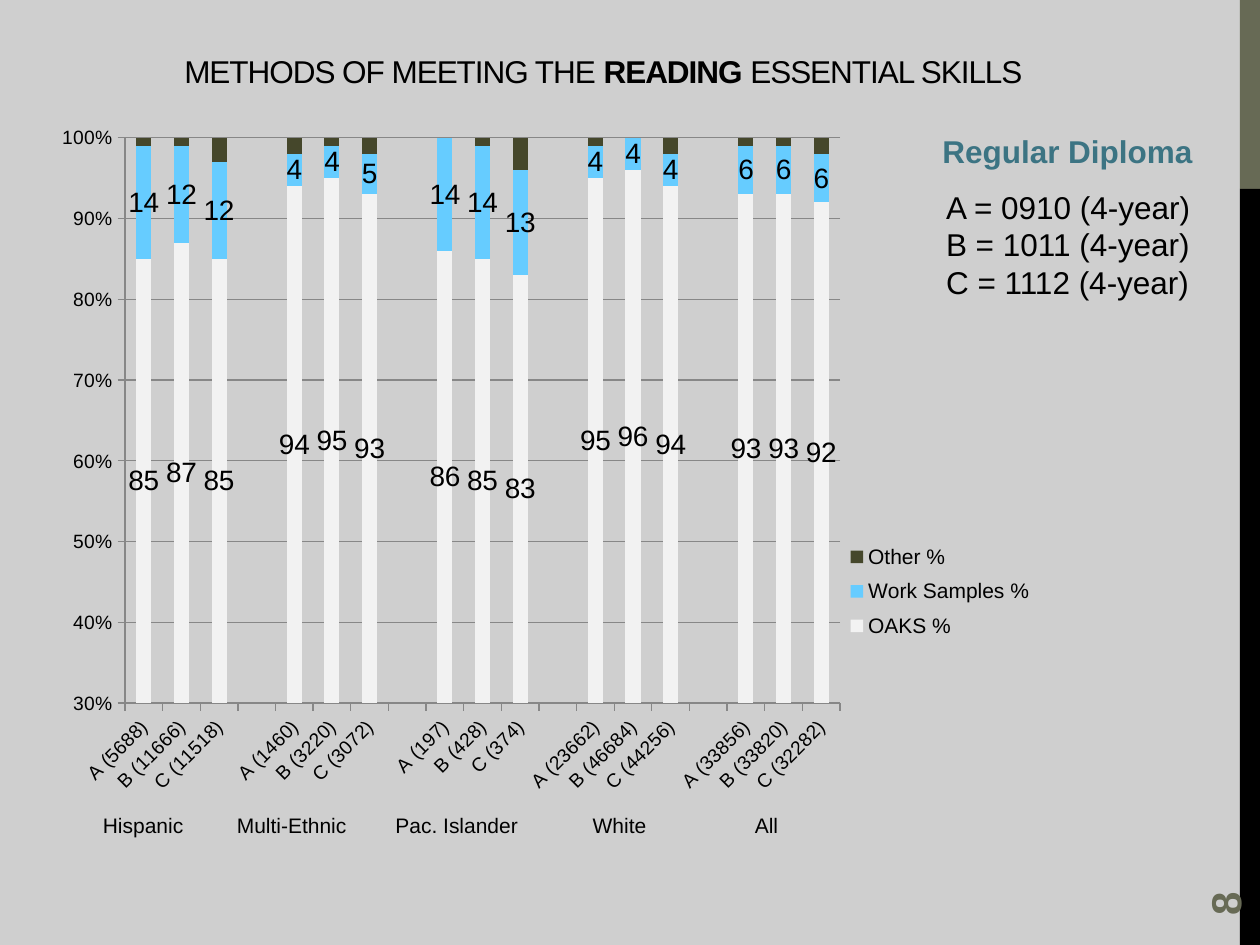
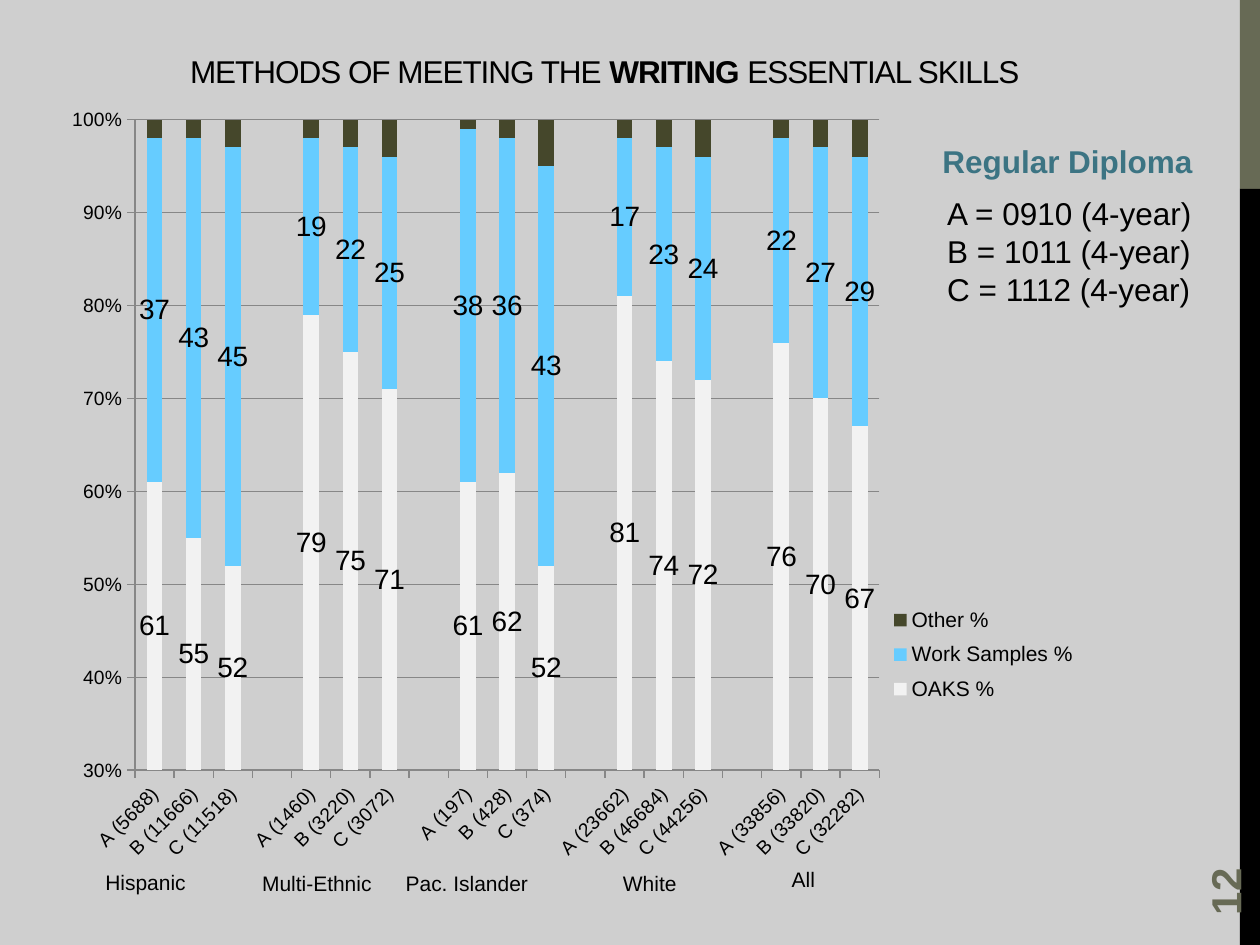
import dataclasses

import lxml.etree
import pptx
import pptx.chart.data
import pptx.dml.color
import pptx.enum.chart
import pptx.enum.shapes
import pptx.enum.text
import pptx.oxml.ns
import pptx.util

Pt = pptx.util.Pt
RGB = pptx.dml.color.RGBColor.from_string
qn = pptx.oxml.ns.qn
ALIGN = pptx.enum.text.PP_ALIGN
ANCHOR = pptx.enum.text.MSO_ANCHOR
AUTO = pptx.enum.text.MSO_AUTO_SIZE
XL = pptx.enum.chart


@dataclasses.dataclass(frozen=True)
class Theme:
    font: str = "Arial"
    background: str = "CFCFCF"
    text: str = "000000"
    olive: str = "676A55"
    teal: str = "3C7483"
    grid: str = "878787"
    series: tuple = ("F2F2F2", "66CCFF", "45472B")
    title_size: int = 18
    number_size: int = 24
    value_size: int = 16
    label_size: int = 12
    axis_size: int = 11


T = Theme()

GROUPS = [  # name, label width, cohort sizes for A, B and C
    ("Hispanic", 70, (5688, 11666, 11518)),
    ("Multi-Ethnic", 81.4, (1460, 3220, 3072)),
    ("Pac. Islander", 90, (197, 428, 374)),
    ("White", 60, (23662, 46684, 44256)),
    ("All", 54, (33856, 33820, 32282)),
]
SERIES = ["OAKS %", "Work Samples %", "Other % "]
DIPLOMA = "Regular Diploma"
COHORTS = ["A = 0910 (4-year)", "B = 1011 (4-year)", "C = 1112 (4-year)"]

# Boxes are left, top, width, height in points; each value triple is A, B, C.
SLIDES = [
    dict(
        number="8", subject="READING", title_left=70.5,
        chart=(30.24, 54.72, 563.76, 462.24),
        plot=(71.4, 78.76, 408.7, 323.1),
        legend=(486, 305, 108, 66),
        values=[
            [(85, 87, 85), (94, 95, 93), (86, 85, 83), (95, 96, 94), (93, 93, 92)],
            [(14, 12, 12), (4, 4, 5), (14, 14, 13), (4, 4, 4), (6, 6, 6)],
            [(1, 1, 3), (2, 1, 2), (0, 1, 4), (1, 0, 2), (1, 1, 2)],
        ],
        group_spots=[(46.8, 460.8), (126, 460.8), (216, 460.8), (324, 460.8), (411, 460.8)],
        diploma=(531.4, 72), cohorts=(533.5, 103.7),
    ),
    dict(
        number="12", subject="WRITING", title_left=71.3,
        chart=(26.64, 61.92, 593.28, 429.84),
        plot=(77.07, 67.94, 425.4, 372.2),
        legend=(508, 341, 108, 66),
        values=[
            [(61, 55, 52), (79, 75, 71), (61, 62, 52), (81, 74, 72), (76, 70, 67)],
            [(37, 43, 45), (19, 22, 25), (38, 36, 43), (17, 23, 24), (22, 27, 29)],
            [(2, 2, 3), (2, 3, 4), (1, 2, 5), (2, 3, 4), (2, 3, 4)],
        ],
        group_spots=[(48.2, 493.2), (140.4, 493.9), (221.8, 493.9), (341.3, 493.9), (432, 491.8)],
        diploma=(531.4, 77.8), cohorts=(534.2, 107.3),
    ),
]


def style(font, size, color=T.text, bold=False):
    for name, value in dict(name=T.font, size=Pt(size), bold=bold).items():
        setattr(font, name, value)
    font.color.rgb = RGB(color)


def points(box):
    return [Pt(v) for v in box]


def add_text(s, box, lines, size, align=ALIGN.LEFT, wrap=True, **look):
    sp = s.shapes.add_textbox(*points(box))
    tf = sp.text_frame
    tf.word_wrap = wrap
    tf.auto_size = AUTO.SHAPE_TO_FIT_TEXT
    for i, line in enumerate(lines):
        p = tf.paragraphs[0] if i == 0 else tf.add_paragraph()
        p.alignment = align
        r = p.add_run()
        r.text = line
        style(r.font, size, **look)
    return sp


def add_frame(s, number):
    """Draw the right-hand band and the turned slide number."""
    for top, height, color in [(0, 108, T.olive), (108, 432, T.text)]:
        sp = s.shapes.add_shape(pptx.enum.shapes.MSO_SHAPE.RECTANGLE,
                                *points((708.5, top, 11.5, height)))
        sp.shadow.inherit = False
        sp.fill.solid()
        sp.fill.fore_color.rgb = RGB(color)
        sp.line.fill.background()
    sp = add_text(s, (648, 463.7, 103.7, 28.8), [number], T.number_size,
                  color=T.olive, bold=True)
    sp.text_frame.auto_size = AUTO.NONE
    sp.text_frame.vertical_anchor = ANCHOR.MIDDLE
    sp.rotation = 270


def set_title(s, subject, left):
    sp = s.shapes.title
    sp.left, sp.top, sp.width, sp.height = points((left, 18, 548.6, 36.7))
    tf = sp.text_frame
    for name, value in dict(word_wrap=True, auto_size=AUTO.NONE,
                            vertical_anchor=ANCHOR.BOTTOM).items():
        setattr(tf, name, value)
    p = tf.paragraphs[0]
    p.alignment = ALIGN.CENTER
    for text, bold in [("METHODS OF MEETING THE ", False), (subject + " ", True),
                       ("ESSENTIAL SKILLS", False)]:
        r = p.add_run()
        r.text = text
        style(r.font, T.title_size, bold=bold)
        r.font._element.set("spc", "-60")


def place_part(part, index, box, chart_box, inner=False):
    """Fix a chart part at a slide position, as fractions of the chart."""
    for old in part.findall(qn("c:layout")):
        part.remove(old)
    layout = lxml.etree.Element(qn("c:layout"))
    manual = lxml.etree.SubElement(layout, qn("c:manualLayout"))
    left, top, width, height = chart_box
    settings = [("layoutTarget", "inner")] if inner else []
    settings += [("xMode", "edge"), ("yMode", "edge"),
                 ("x", (box[0] - left) / width), ("y", (box[1] - top) / height),
                 ("w", box[2] / width), ("h", box[3] / height)]
    for tag, value in settings:
        lxml.etree.SubElement(manual, qn("c:" + tag)).set("val", str(value))
    part.insert(index, layout)


def spread(triples, gap):
    """Join the triples into one list with a gap between groups."""
    joined = []
    for triple in triples:
        joined += [*triple, gap]
    return joined[:-1]


def add_results_chart(s, spec_):
    data = pptx.chart.data.CategoryChartData(number_format="0")
    data.categories = spread(
        [[f"{c} ({n})" for c, n in zip("ABC", sizes)] for _, _, sizes in GROUPS], "")
    for name, triples in zip(SERIES, spec_["values"]):
        data.add_series(name, spread(triples, None))
    chart = s.shapes.add_chart(XL.XL_CHART_TYPE.COLUMN_STACKED_100,
                               *points(spec_["chart"]), data).chart
    chart.has_title = False
    style(chart.font, 10)

    plot = chart.plots[0]
    for name, value in dict(gap_width=150, overlap=100, vary_by_categories=False).items():
        setattr(plot, name, value)
    for series, color in zip(plot.series, T.series):
        series.format.fill.solid()
        series.format.fill.fore_color.rgb = RGB(color)
    for series in list(plot.series)[:2]:
        labels = series.data_labels
        for name, value in dict(show_value=True, number_format="0",
                                number_format_is_linked=False,
                                position=XL.XL_LABEL_POSITION.CENTER).items():
            setattr(labels, name, value)
        style(labels.font, T.value_size)

    value_axis, category_axis = chart.value_axis, chart.category_axis
    for name, value in dict(minimum_scale=0.3, maximum_scale=1, major_unit=0.1,
                            has_major_gridlines=True).items():
        setattr(value_axis, name, value)
    value_axis.tick_labels.number_format = "0%"
    value_axis.tick_labels.number_format_is_linked = False
    for axis in (value_axis, category_axis):
        axis.major_tick_mark = XL.XL_TICK_MARK.OUTSIDE
        style(axis.tick_labels.font, T.axis_size)
    for lined in (value_axis, category_axis, value_axis.major_gridlines):
        lined.format.line.color.rgb = RGB(T.grid)
        lined.format.line.width = Pt(0.75)
    body = category_axis._element.find(qn("c:txPr")).find(qn("a:bodyPr"))
    body.set("rot", "-2700000")
    body.set("vert", "horz")

    chart.has_legend = True
    legend = chart.legend
    legend.position = XL.XL_LEGEND_POSITION.RIGHT
    legend.include_in_layout = False
    style(legend.font, T.label_size)
    place_part(legend._element, 1, spec_["legend"], spec_["chart"])
    plot_area = chart._chartSpace.chart.plotArea
    place_part(plot_area, 0, spec_["plot"], spec_["chart"], inner=True)


def build_slide(prs, content):
    s = prs.slides.add_slide(prs.slide_layouts[5])
    add_frame(s, content["number"])
    set_title(s, content["subject"], content["title_left"])
    add_results_chart(s, content)
    for (name, width, _), spot in zip(GROUPS, content["group_spots"]):
        add_text(s, (*spot, width, 21.8), [name], T.label_size, ALIGN.CENTER)
    add_text(s, (*content["diploma"], 159, 29), [DIPLOMA], T.title_size,
             wrap=False, color=T.teal, bold=True)
    add_text(s, (*content["cohorts"], 156, 72.7), COHORTS, T.title_size, wrap=False)


def main():
    prs = pptx.Presentation()
    prs.slide_width, prs.slide_height = Pt(720), Pt(540)
    fill = prs.slide_master.background.fill
    fill.solid()
    fill.fore_color.rgb = RGB(T.background)
    for content in SLIDES:
        build_slide(prs, content)
    prs.save("out.pptx")


if __name__ == "__main__":
    main()
